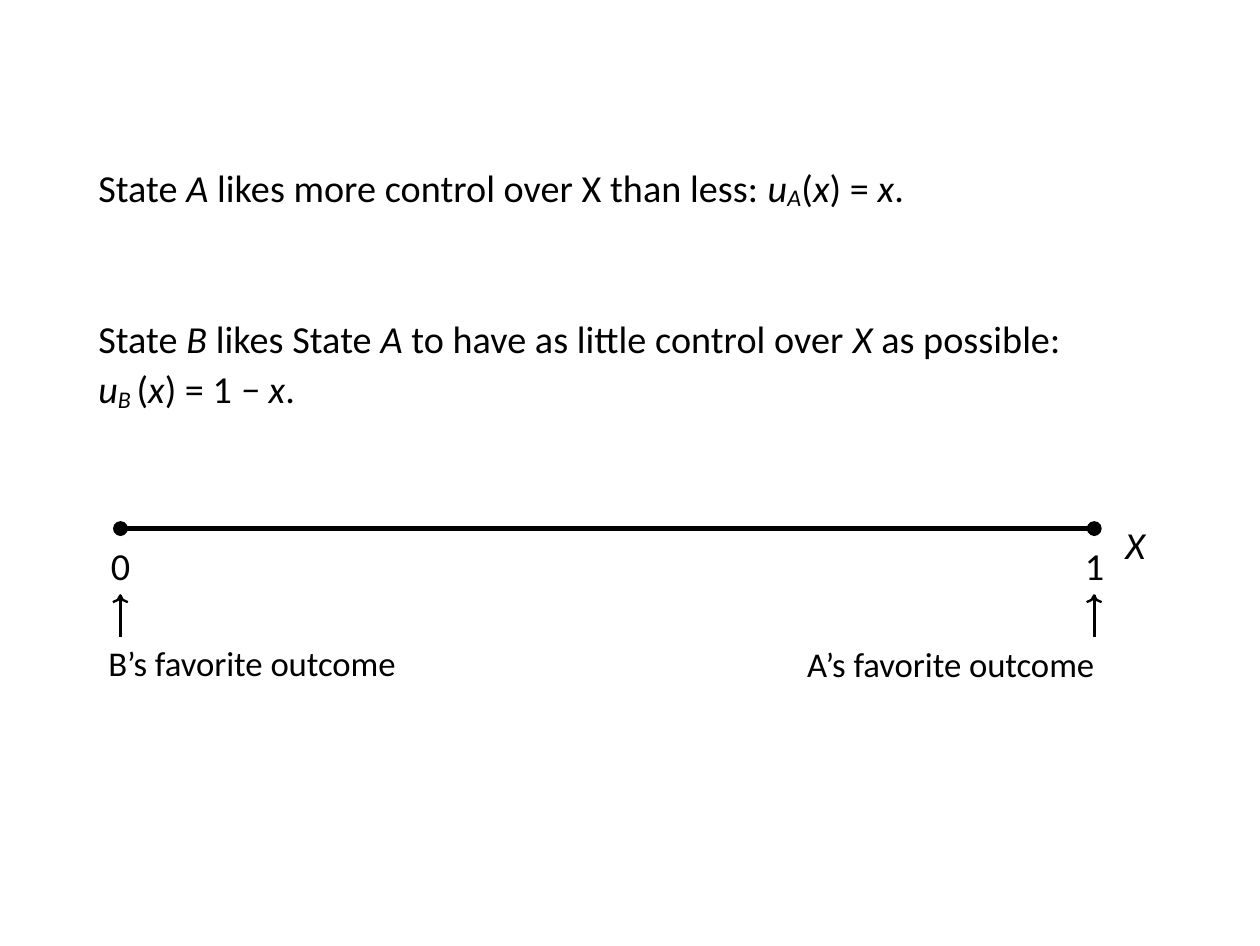
from pptx import Presentation
from pptx import util as u
from pptx.dml.color import RGBColor
from pptx.enum import shapes, text
from pptx.oxml.ns import qn
from lxml import etree

COLUMNS, ROWS = 84, 63
BLACK = "000000"


def colour(hex_string):
    return RGBColor.from_string(hex_string)


class Board:
    """Draws on one slide; every length is in grid columns and rows."""

    font_name = "Calibri"

    def __init__(self, presentation):
        self.slide = presentation.slides.add_slide(presentation.slide_layouts[6])
        self.column = presentation.slide_width / COLUMNS
        self.row = presentation.slide_height / ROWS

    def x(self, columns):
        return round(columns * self.column)

    def y(self, rows):
        return round(rows * self.row)

    def line(self, start, end, weight):
        connector = self.slide.shapes.add_connector(
            shapes.MSO_CONNECTOR.STRAIGHT,
            self.x(start[0]), self.y(start[1]), self.x(end[0]), self.y(end[1]))
        connector.line.color.rgb = colour(BLACK)
        connector.line.width = u.Pt(weight)
        etree.SubElement(connector._element.spPr, qn("a:effectLst"))

    def dot(self, column, row, size=0.9):
        shape = self.slide.shapes.add_shape(
            shapes.MSO_SHAPE.OVAL, self.x(column - size / 2), self.y(row - size / 2),
            self.x(size), self.y(size))
        shape.shadow.inherit = False
        shape.fill.solid()
        shape.fill.fore_color.rgb = colour(BLACK)
        shape.line.color.rgb = colour(BLACK)
        shape.line.width = u.Pt(0.4)

    def up_arrow(self, column, top, bottom):
        self.line((column, bottom), (column, top), 0.85)
        # Curved open head
        barbs = [(-0.5, 0.45), (-0.17, 0.3), (0, 0), (0.17, 0.3), (0.5, 0.45)]
        points = [(self.x(column + dx), self.y(top + dy)) for dx, dy in barbs]
        builder = self.slide.shapes.build_freeform(*points[0])
        builder.add_line_segments(points[1:], close=False)
        head = builder.convert_to_shape()
        head.shadow.inherit = False
        head.fill.background()
        head.line.color.rgb = colour(BLACK)
        head.line.width = u.Pt(0.68)

    def text_box(self, left, top, width, height, paragraphs, size=11):
        """Each paragraph is (space before, alignment, [(text, style), ...])."""
        box = self.slide.shapes.add_textbox(
            self.x(left), self.y(top), self.x(width), self.y(height))
        frame = box.text_frame
        frame.word_wrap = True
        frame.margin_left = frame.margin_right = frame.margin_bottom = 0
        frame.margin_top = u.Inches(0.01)
        for index, (space, alignment, pieces) in enumerate(paragraphs):
            paragraph = frame.add_paragraph() if index else frame.paragraphs[0]
            paragraph.space_before = u.Pt(space)
            paragraph.alignment = alignment
            for words, style in pieces:
                run = paragraph.add_run()
                run.text = words
                run.font.name = self.font_name
                run.font.size = u.Pt(12 if style == "sub" else size)
                run.font.italic = style in ("italic", "sub")
                run.font.color.rgb = colour(BLACK)
                if style == "sub":
                    run.font._element.set("baseline", "-10000")

    def label(self, left, top, width, words, size):
        pieces = [(words, "plain")]
        self.text_box(left, top, width, 3.2, [(0.9, text.PP_ALIGN.LEFT, pieces)], size)


def main():
    presentation = Presentation()
    presentation.slide_width = u.Pt(363)
    presentation.slide_height = u.Pt(272.5)
    board = Board(presentation)

    # Preferences of the two states, and the name of the axis
    state_a = [("State ", "plain"), ("A ", "italic"),
               ("likes more control over X than less: ", "plain"),
               ("u", "italic"), ("A", "sub"), ("(", "plain"), ("x", "italic"),
               (") = ", "plain"), ("x", "italic"), (".", "plain")]
    state_b = [("State ", "plain"), ("B ", "italic"), ("likes State ", "plain"),
               ("A ", "italic"), ("to have as little control over ", "plain"),
               ("X ", "italic"), ("as possible:", "plain")]
    utility_b = [("u", "italic"), ("B ", "sub"), ("(", "plain"), ("x", "italic"),
                 (") = 1 ", "plain"), ("− x", "italic"), (".", "plain")]
    left, right = text.PP_ALIGN.LEFT, text.PP_ALIGN.RIGHT
    board.text_box(6.55, 10.55, 69.8, 26.8, [
        (0.9, left, state_a), (29.9, left, state_b), (0.3, left, utility_b),
        (31.2, right, [("X", "italic")])])

    # Axis from 0 to 1
    axis_row, axis_ends = 35.2, (8.03, 72.95)
    board.line((axis_ends[0], axis_row), (axis_ends[1], axis_row), 1.42)

    # End points, their values and the favorite outcomes
    outcomes = [("0", "B’s favorite outcome", 7.22, 42.57),
                ("1", "A’s favorite outcome", 53.8, 42.62)]
    for column, (value, outcome, outcome_left, outcome_top) in zip(axis_ends, outcomes):
        board.dot(column, axis_row)
        board.label(column - 0.63, 35.97, 1.67, value, 11)
        board.up_arrow(column, 39.65, 42.4)
        board.label(outcome_left, outcome_top, 20.5, outcome, 10)

    presentation.save("out.pptx")


if __name__ == "__main__":
    main()
